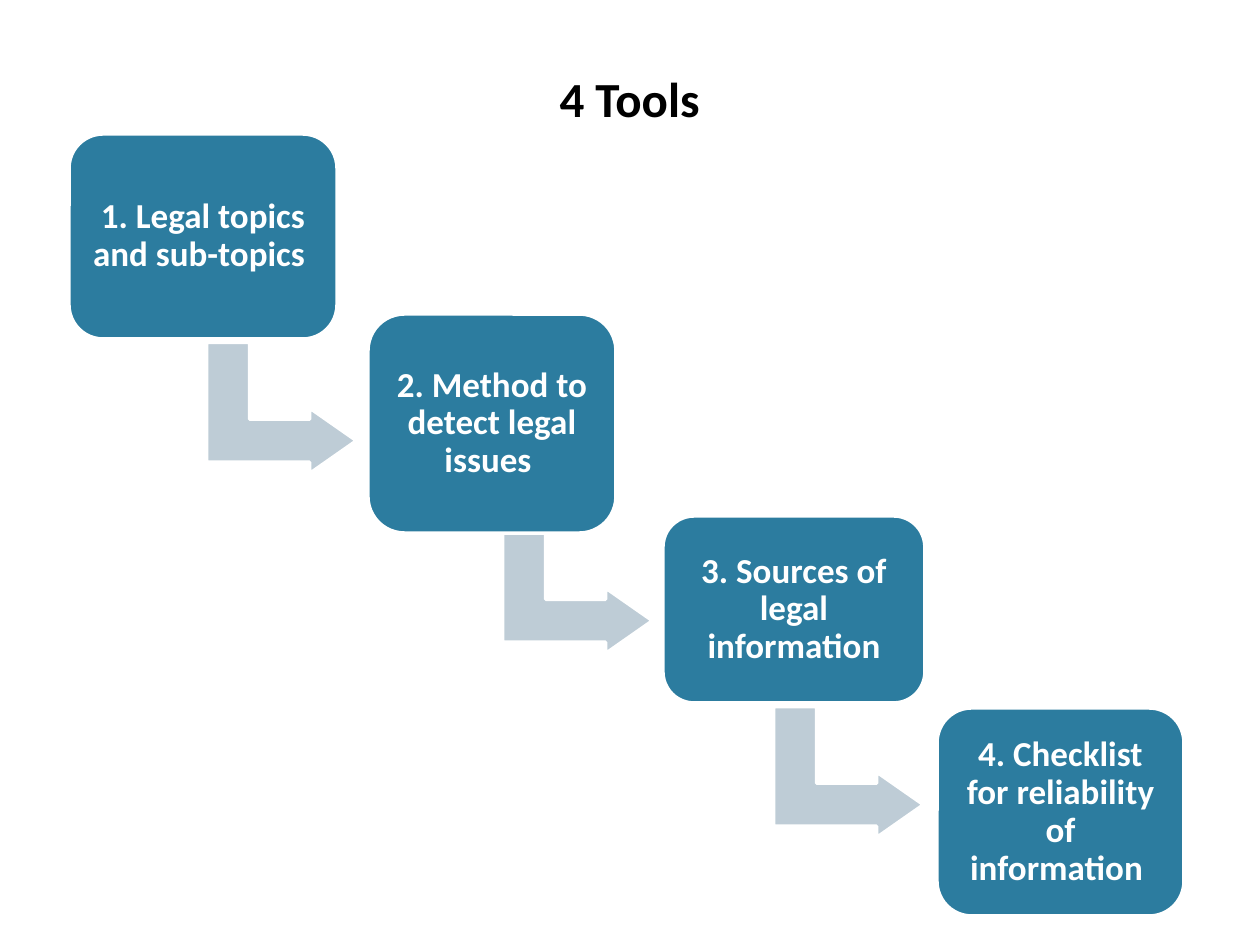
from dataclasses import dataclass
from typing import Optional

from pptx import Presentation
from pptx.dml.color import RGBColor
from pptx.enum.shapes import MSO_SHAPE
from pptx.enum.text import MSO_ANCHOR, PP_ALIGN
from pptx.util import Pt

EMU_PER_PX = 914400 / 126
TITLE_ONLY = 5
ROUND_RECT = MSO_SHAPE.ROUNDED_RECTANGLE
BENT_ARROW = MSO_SHAPE.BENT_UP_ARROW
CENTER = PP_ALIGN.CENTER
MIDDLE, BOTTOM = MSO_ANCHOR.MIDDLE, MSO_ANCHOR.BOTTOM

BLACK = RGBColor(0x00, 0x00, 0x00)
WHITE = RGBColor(0xFF, 0xFF, 0xFF)
TEAL = RGBColor(0x2C, 0x7C, 0x9F)
GREY_BLUE = RGBColor(0xBE, 0xCC, 0xD6)

ARROW_W, ARROW_H = 131, 150
ARROW_ADJUSTMENTS = (0.328, 0.25, 0.358)
BOX_INSET = 10  # the rounded corners add about as much again

TITLE_FONT = {"name": "Calibri", "size": Pt(28), "bold": True}
STEP_FONT = {"name": "Calibri", "size": Pt(20), "bold": True}


@dataclass(frozen=True)
class Step:
    text: str
    box: tuple[int, int, int, int]
    arrow: Optional[tuple[int, int]] = None  # left, top before rotation


STEPS = [
    Step("1. Legal topics and sub-topics ", (69, 134, 268, 205), (216, 333)),
    Step("2. Method to detect legal issues ", (368, 314, 248, 219), (512, 513)),
    Step("3. Sources of legal information", (663, 516, 262, 187), (783, 697)),
    Step("4. Checklist for reliability of information ", (937, 708, 247, 208)),
]


def px(n: int) -> int:
    return round(n * EMU_PER_PX)


def set_font(font, style: dict, color: RGBColor) -> None:
    for name, value in style.items():
        setattr(font, name, value)
    font.color.rgb = color


def add_filled(shapes, kind, box: tuple[int, int, int, int], color: RGBColor):
    sp = shapes.add_shape(kind, *map(px, box))
    sp.shadow.inherit = False
    sp.fill.solid()
    sp.fill.fore_color.rgb = color
    sp.line.color.rgb = WHITE
    sp.line.width = Pt(2)
    return sp


def add_arrow(shapes, left: int, top: int) -> None:
    sp = add_filled(shapes, BENT_ARROW, (left, top, ARROW_W, ARROW_H), GREY_BLUE)
    sp.rotation = 90
    for i, value in enumerate(ARROW_ADJUSTMENTS):
        sp.adjustments[i] = value


def add_box(shapes, step: Step) -> None:
    tf = add_filled(shapes, ROUND_RECT, step.box, TEAL).text_frame
    tf.word_wrap = True
    tf.vertical_anchor = MIDDLE
    for side in ("left", "top", "right", "bottom"):
        setattr(tf, f"margin_{side}", px(BOX_INSET))
    p = tf.paragraphs[0]
    p.alignment = CENTER
    p.line_spacing = 0.9
    r = p.add_run()
    r.text = step.text
    set_font(r.font, STEP_FONT, WHITE)


def main() -> None:
    prs = Presentation()
    prs.slide_width, prs.slide_height = px(1260), px(945)
    s = prs.slides.add_slide(prs.slide_layouts[TITLE_ONLY])

    # Title
    title = s.shapes.title
    title.left, title.top, title.width, title.height = map(px, (75, 16, 1109, 118))
    tf = title.text_frame
    tf.vertical_anchor = BOTTOM
    p = tf.paragraphs[0]
    p.alignment = CENTER
    r = p.add_run()
    r.text = "4 Tools"
    set_font(r.font, TITLE_FONT, BLACK)

    # Staircase: each arrow lies behind the box it leaves
    group = s.shapes.add_group_shape()
    for step in STEPS:
        if step.arrow:
            add_arrow(group.shapes, *step.arrow)
        add_box(group.shapes, step)

    prs.save("out.pptx")


if __name__ == "__main__":
    main()
